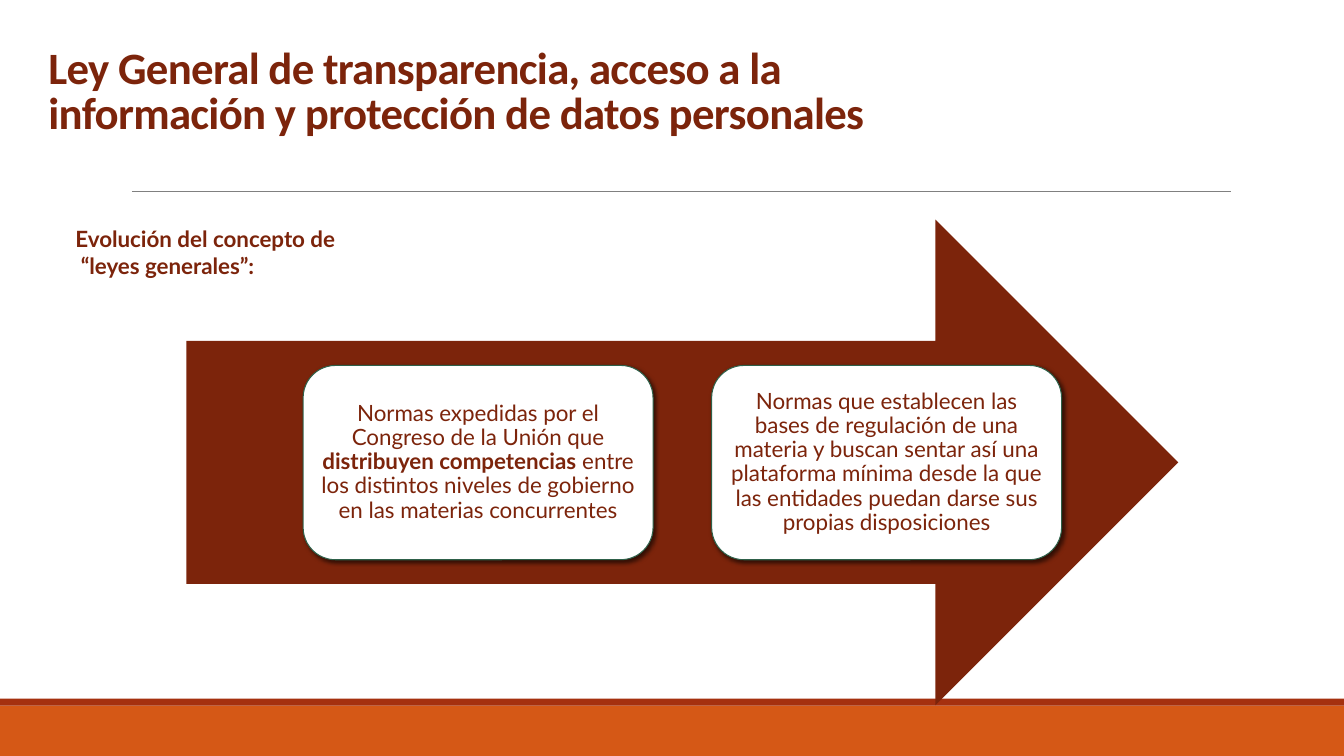
from lxml import etree
from pptx import Presentation
from pptx.dml.color import RGBColor
from pptx.enum.shapes import MSO_CONNECTOR, MSO_SHAPE as SHAPE
from pptx.enum.text import MSO_ANCHOR as ANCHOR, MSO_AUTO_SIZE as AUTO, PP_ALIGN as ALIGN
from pptx.oxml import parse_xml
from pptx.oxml.ns import nsdecls, qn
from pptx.util import Pt

BROWN = "7C240B"


def color(fmt, value):
    fmt.solid()
    fmt.fore_color.rgb = RGBColor.from_string(value)


def add_block(kind, x, y, w, h, fill):
    sp = s.shapes.add_shape(kind, Pt(x), Pt(y), Pt(w), Pt(h))
    sp.shadow.inherit = False
    color(sp.fill, fill)
    sp.line.fill.background()
    return sp


prs = Presentation()
prs.slide_width, prs.slide_height = Pt(960), Pt(540)
s = prs.slides.add_slide(prs.slide_layouts[5])

add_block(SHAPE.RECTANGLE, 0, 504, 960, 36, "D55816")
add_block(SHAPE.RECTANGLE, 0, 499, 960, 5, "A5300F")

rule = s.shapes.add_connector(MSO_CONNECTOR.STRAIGHT, Pt(94.3), Pt(136.5), Pt(879), Pt(136.5))
color(rule.line.fill, "808080")
rule.line.width = Pt(0.5)
etree.SubElement(rule.element.spPr, qn("a:effectLst"))

title = s.shapes.title
title.left, title.top, title.width, title.height = Pt(27.4), Pt(39.5), Pt(899), Pt(63.5)
tf = title.text_frame
tf.text = "Ley General de transparencia, acceso a la \vinformación y protección de datos personales"
tf.vertical_anchor = ANCHOR.BOTTOM
tf.auto_size = AUTO.NONE
p = tf.paragraphs[0]
p.alignment = ALIGN.LEFT
p.line_spacing = 0.85
p.font.name, p.font.size, p.font.bold = "Calibri", Pt(32), True
color(p.font.fill, BROWN)
for r in p.runs:
    r.font._element.set("spc", "-50")

add_block(SHAPE.RIGHT_ARROW, 133.2, 156.8, 708.5, 347, BROWN)

cards = [
    [
        ("Normas expedidas por el Congreso de la Unión que ", False),
        ("distribuyen competencias", True),
        (" entre los distintos niveles de gobierno en las materias concurrentes", False),
    ],
    [
        ("Normas que establecen las bases de regulación de una materia y buscan sentar así una "
         "plataforma mínima desde la que las entidades puedan darse sus propias disposiciones", False),
    ],
]
for i, runs in enumerate(cards):
    card = add_block(SHAPE.ROUNDED_RECTANGLE, 216.5 + i * 291.8, 261, 250, 138.8, "FFFFFF")
    color(card.line.fill, "2E6049")
    card.line.width = Pt(0.75)
    card.element.spPr.find(qn("a:effectLst")).append(parse_xml(
        f'<a:outerShdw {nsdecls("a")} blurRad="{Pt(3)}" dist="{Pt(2)}" dir="2700000" algn="ctr" rotWithShape="0">'
        '<a:srgbClr val="000000"><a:alpha val="60000"/></a:srgbClr></a:outerShdw>'))
    tf = card.text_frame
    tf.word_wrap = True
    tf.vertical_anchor = ANCHOR.MIDDLE
    tf.margin_left = tf.margin_right = tf.margin_top = tf.margin_bottom = Pt(5)
    p = tf.paragraphs[0]
    p.alignment = ALIGN.CENTER
    p.line_spacing = 0.9
    p.font.name, p.font.size = "Lato", Pt(16)
    color(p.font.fill, BROWN)
    for text, bold in runs:
        r = p.add_run()
        r.text = text
        r.font.bold = bold

subtitle = s.shapes.add_textbox(Pt(46.8), Pt(157), Pt(522.7), Pt(46))
tf = subtitle.text_frame
tf.word_wrap = True
tf.text = "Evolución del concepto de\n “leyes generales”:"
for p in tf.paragraphs:
    p.font.name, p.font.size, p.font.bold = "Lato", Pt(16), True
    color(p.font.fill, BROWN)

prs.save("out.pptx")
